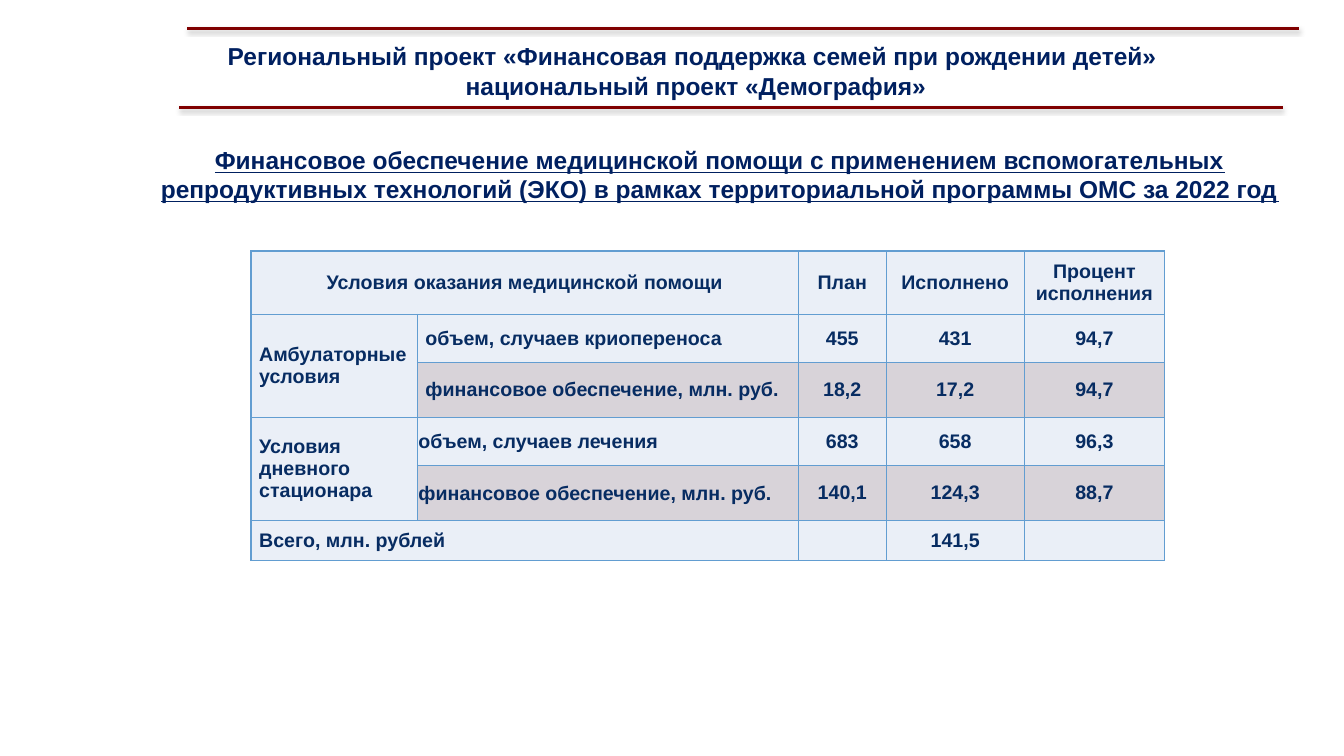
from dataclasses import dataclass

from lxml import etree
from pptx import Presentation
from pptx.dml.color import RGBColor
from pptx.enum.shapes import MSO_CONNECTOR
from pptx.enum.text import MSO_ANCHOR, PP_ALIGN
from pptx.oxml import parse_xml
from pptx.oxml.ns import nsdecls
from pptx.util import Emu, Inches, Pt

STRAIGHT = MSO_CONNECTOR.STRAIGHT
MIDDLE, TOP = MSO_ANCHOR.MIDDLE, MSO_ANCHOR.TOP
LEFT, CENTER = PP_ALIGN.LEFT, PP_ALIGN.CENTER

FONT = "Arial"
NAVY, TABLE_NAVY, MAROON = "002060", "072C62", "800000"
PALE, GREY, BORDER = "EAEFF7", "D8D3D9", "629DD1"
HEADING_SIZE, TABLE_SIZE = 17.5, 14
CELL_INSET, TIGHT_INSET = 0.08, 0.01


# Places are percentages of the slide's width and height
@dataclass
class Rule:
    left: float
    right: float
    top: float


@dataclass
class Heading:
    left: float
    top: float
    width: float
    height: float
    lines: list[str]
    underline: bool = False


RULES = [Rule(13.95, 96.68, 3.8), Rule(13.35, 95.48, 14.27)]
HEADINGS = [
    Heading(10.43, 18.53, 86.25, 10.53,
            ["Финансовое обеспечение медицинской помощи с применением вспомогательных "
             "репродуктивных технологий (ЭКО) в рамках территориальной программы ОМС "
             "за 2022 год"], underline=True),
    Heading(12.83, 4.8, 77.93, 8.93,
            ["Региональный проект «Финансовая поддержка семей при рождении детей» ",
             "национальный проект «Демография»"]),
]

TABLE_LEFT, TABLE_TOP = 18.68, 33.2
COL_WIDTHS = [12.38, 28.35, 6.53, 10.28, 10.43]
ROW_HEIGHTS = [8.4, 6.35, 7.28, 6.35, 7.28, 5.29]
ROWS = [
    ["Условия оказания медицинской помощи", "", "План", "Исполнено", "Процент исполнения"],
    ["Амбулаторные условия", "объем, случаев криопереноса", "455", "431", "94,7"],
    ["", "финансовое обеспечение, млн. руб.", "18,2", "17,2", "94,7"],
    ["Условия дневного стационара", "объем, случаев лечения", "683", "658", "96,3"],
    ["", "финансовое обеспечение, млн. руб.", "140,1", "124,3", "88,7"],
    ["Всего, млн. рублей", "", "", "141,5", ""],
]
MERGES = [((0, 0), (0, 1)), ((1, 0), (2, 0)), ((3, 0), (4, 0)), ((5, 0), (5, 1))]
FINANCE_ROWS = (2, 4)
TIGHT_CELLS = ((3, 1), (4, 1))

prs = Presentation()
prs.slide_width, prs.slide_height = Inches(13.33), Inches(7.5)
s = prs.slides.add_slide(prs.slide_layouts[6])


def x(share: float) -> Emu:
    return Emu(int(prs.slide_width * share / 100))


def y(share: float) -> Emu:
    return Emu(int(prs.slide_height * share / 100))


def rgb(color: str) -> RGBColor:
    return RGBColor.from_string(color)


def style_paragraph(p, size: float, color: str, align, underline: bool = False) -> None:
    p.alignment = align
    for r in p.runs:
        r.font.name, r.font.size, r.font.bold = FONT, Pt(size), True
        r.font.color.rgb = rgb(color)
        if underline:
            r.font.underline = True


def add_rule(rule: Rule) -> None:
    line = s.shapes.add_connector(STRAIGHT, x(rule.left), y(rule.top),
                                  x(rule.right), y(rule.top))
    line.line.color.rgb, line.line.width = rgb(MAROON), Pt(2)
    line._element.spPr.append(parse_xml(
        f'<a:effectLst {nsdecls("a")}>'
        f'<a:outerShdw blurRad="{Pt(3.1)}" dist="{Pt(1.6)}" dir="5400000" rotWithShape="0">'
        '<a:srgbClr val="000000"><a:alpha val="38000"/></a:srgbClr>'
        '</a:outerShdw></a:effectLst>'))


def add_heading(heading: Heading) -> None:
    tf = s.shapes.add_textbox(x(heading.left), y(heading.top),
                              x(heading.width), y(heading.height)).text_frame
    tf.word_wrap, tf.vertical_anchor = True, TOP
    tf.text = "\n".join(heading.lines)
    for p in tf.paragraphs:
        style_paragraph(p, HEADING_SIZE, NAVY, CENTER, heading.underline)


def add_borders(cell) -> None:
    tc_pr = cell._tc.get_or_add_tcPr()
    for i, side in enumerate(("lnL", "lnR", "lnT", "lnB")):
        tc_pr.insert(i, etree.fromstring(
            f'<a:{side} {nsdecls("a")} w="{Pt(1)}"><a:solidFill>'
            f'<a:srgbClr val="{BORDER}"/></a:solidFill></a:{side}>'))


def fill_cell(cell, row: int, col: int, text: str) -> None:
    tight = (row, col) in TIGHT_CELLS
    cell.margin_left = cell.margin_right = Inches(TIGHT_INSET if tight else CELL_INSET)
    cell.margin_top = Inches(TIGHT_INSET if tight else 0)
    cell.margin_bottom = 0
    cell.vertical_anchor = MIDDLE
    cell.fill.solid()
    cell.fill.fore_color.rgb = rgb(GREY if row in FINANCE_ROWS and col else PALE)
    add_borders(cell)
    if text:
        cell.text_frame.text = text
        align = CENTER if row == 0 or col > 1 else LEFT
        style_paragraph(cell.text_frame.paragraphs[0], TABLE_SIZE, TABLE_NAVY, align)


def add_funding_table() -> None:
    table = s.shapes.add_table(len(ROWS), len(COL_WIDTHS), x(TABLE_LEFT), y(TABLE_TOP),
                               x(sum(COL_WIDTHS)), y(sum(ROW_HEIGHTS))).table
    for column, width in zip(table.columns, COL_WIDTHS):
        column.width = x(width)
    for table_row, height in zip(table.rows, ROW_HEIGHTS):
        table_row.height = y(height)
    for first, last in MERGES:
        table.cell(*first).merge(table.cell(*last))
    for row, texts in enumerate(ROWS):
        for col, text in enumerate(texts):
            fill_cell(table.cell(row, col), row, col, text)


# Table of funding, then rules and headings
add_funding_table()
for rule in RULES:
    add_rule(rule)
for heading in HEADINGS:
    add_heading(heading)

prs.save("out.pptx")
